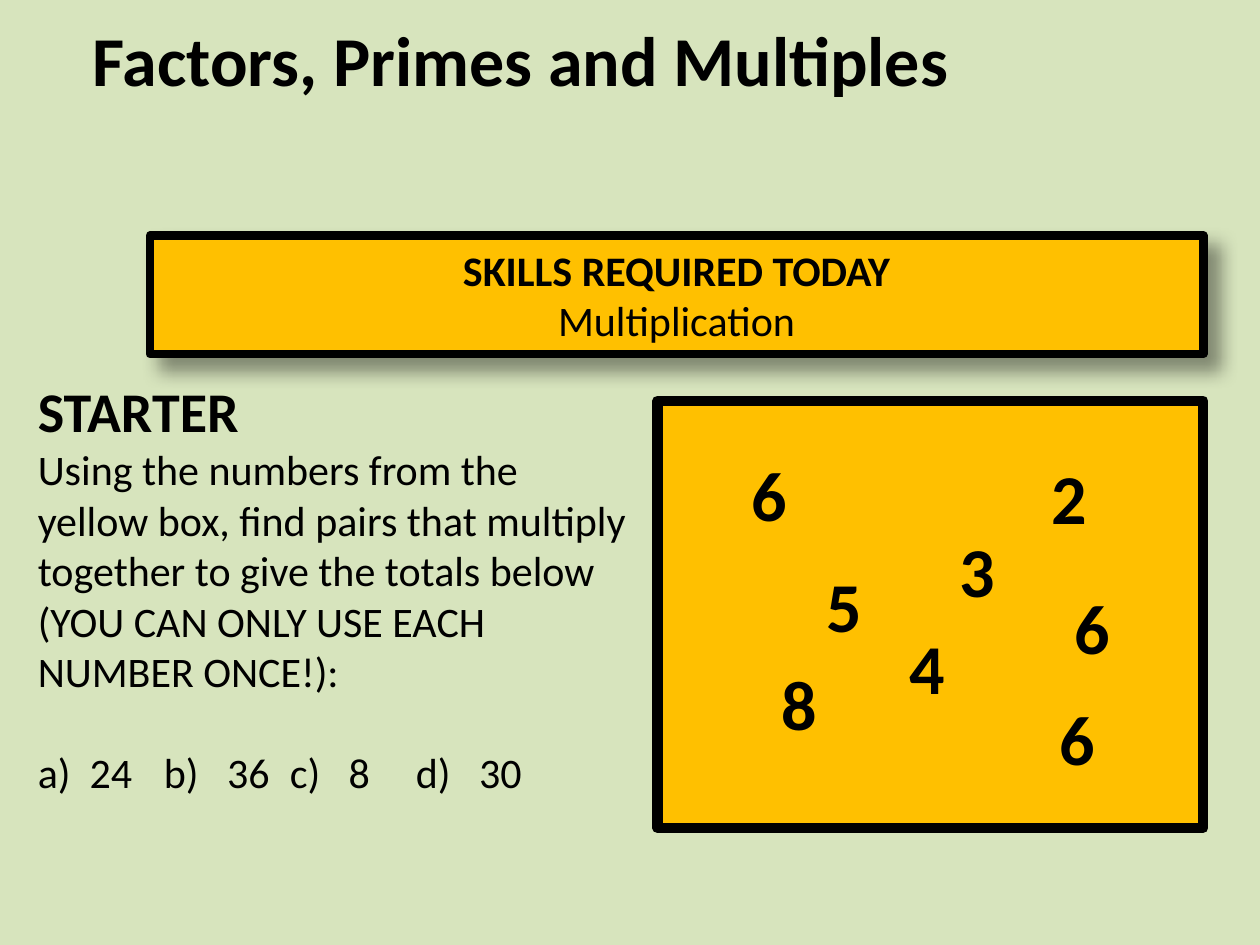
"""Build a maths starter slide on factors, primes and multiples."""
from dataclasses import dataclass

import lxml.etree
import pptx
import pptx.dml.color
import pptx.enum.shapes
import pptx.enum.text
import pptx.oxml.ns
import pptx.util

Pt = pptx.util.Pt
ALIGN = pptx.enum.text.PP_ALIGN
ANCHOR = pptx.enum.text.MSO_ANCHOR
AUTO_SIZE = pptx.enum.text.MSO_AUTO_SIZE


@dataclass(frozen=True)
class Theme:
    """Hold the colours and type of the slide."""
    font: str = "Calibri"
    background: str = "D7E4BD"
    box: str = "FFC000"
    ink: str = "000000"
    large: int = 40
    heading: int = 32
    body: int = 24


THEME = Theme()
TITLE = [("Factors, Primes and Multiples", THEME.large, True)]
SKILLS = [("SKILLS REQUIRED TODAY", THEME.body, True), ("Multiplication", THEME.body, False)]
STARTER = [
    ("STARTER", THEME.heading, True),
    ("Using the numbers from the yellow box, find pairs that multiply together "
     "to give the totals below (YOU CAN ONLY USE EACH NUMBER ONCE!):", THEME.body, False),
    ("a)  24\tb)   36\tc)   8\td)   30", THEME.body, False),
]
NUMBERS = [
    ("8", 439.2, 373.7), ("3", 541.4, 298.1), ("6", 598.3, 393.8), ("6", 422.6, 254.2),
    ("4", 512.6, 353.5), ("2", 594, 256.3), ("5", 465.1, 318.2), ("6", 607, 330.5),
]
NUMBER_SIZE = (35.3, 55.4)
TITLE_AREA = (-8.6, -24.5, 612, 115.9)
STARTER_AREA = (14.4, 211.7, 351.4, 249.8)
SKILLS_AREA = (85.7, 134.6, 601.9, 67.7)
NUMBER_AREA = (375.8, 229, 311.8, 244.1)
ANSWER_GAP = 29


def colour(value):
    """Return an RGB colour."""
    return pptx.dml.color.RGBColor.from_string(value)


def place(shape, area):
    """Move and size a shape."""
    shape.left, shape.top, shape.width, shape.height = map(Pt, area)


def write(shape, lines, alignment, anchor=ANCHOR.TOP, wrap=True, auto_size=AUTO_SIZE.NONE):
    """Fill a shape with formatted paragraphs."""
    frame = shape.text_frame
    frame.text = "\n".join(text for text, size, bold in lines)
    frame.word_wrap, frame.auto_size, frame.vertical_anchor = wrap, auto_size, anchor
    for paragraph, (text, size, bold) in zip(frame.paragraphs, lines):
        paragraph.alignment = alignment
        paragraph.space_before = Pt(0)
        for run in paragraph.runs:
            run.font.name, run.font.size, run.font.bold = THEME.font, Pt(size), bold
            run.font.color.rgb = colour(THEME.ink)


def add_box(slide, area, line_width):
    """Add an outlined yellow rectangle."""
    box = slide.shapes.add_shape(pptx.enum.shapes.MSO_SHAPE.RECTANGLE, *map(Pt, area))
    box.shadow.inherit = False
    box.fill.solid()
    box.fill.fore_color.rgb = colour(THEME.box)
    box.line.color.rgb = colour(THEME.ink)
    box.line.width = Pt(line_width)
    return box


def add_shadow(shape):
    """Cast a soft shadow down and to the right."""
    qn = pptx.oxml.ns.qn
    effects = shape.element.spPr.find(qn("a:effectLst"))
    shadow = lxml.etree.SubElement(
        effects, qn("a:outerShdw"), blurRad=str(Pt(10)), dist=str(Pt(10)),
        dir=str(45 * 60000), algn="tl", rotWithShape="0")
    shade = lxml.etree.SubElement(shadow, qn("a:srgbClr"), val=THEME.ink)
    lxml.etree.SubElement(shade, qn("a:alpha"), val="40000")


def main():
    """Compose and save the slide."""
    presentation = pptx.Presentation()
    presentation.slide_width, presentation.slide_height = Pt(720), Pt(540)
    slide = presentation.slides.add_slide(presentation.slide_layouts[0])
    slide.background.fill.solid()
    slide.background.fill.fore_color.rgb = colour(THEME.background)

    title, starter = slide.placeholders
    place(title, TITLE_AREA)
    write(title, TITLE, ALIGN.CENTER, ANCHOR.MIDDLE)
    place(starter, STARTER_AREA)
    write(starter, STARTER, ALIGN.LEFT, auto_size=AUTO_SIZE.SHAPE_TO_FIT_TEXT)
    starter.text_frame.paragraphs[-1].space_before = Pt(ANSWER_GAP)

    skills = add_box(slide, SKILLS_AREA, 5)
    add_shadow(skills)
    write(skills, SKILLS, ALIGN.CENTER, ANCHOR.MIDDLE)

    add_box(slide, NUMBER_AREA, 6)
    for digit, left, top in NUMBERS:
        number = slide.shapes.add_textbox(*map(Pt, (left, top, *NUMBER_SIZE)))
        write(number, [(digit, THEME.large, True)], ALIGN.LEFT, wrap=False,
              auto_size=AUTO_SIZE.SHAPE_TO_FIT_TEXT)

    presentation.save("out.pptx")


if __name__ == "__main__":
    main()
